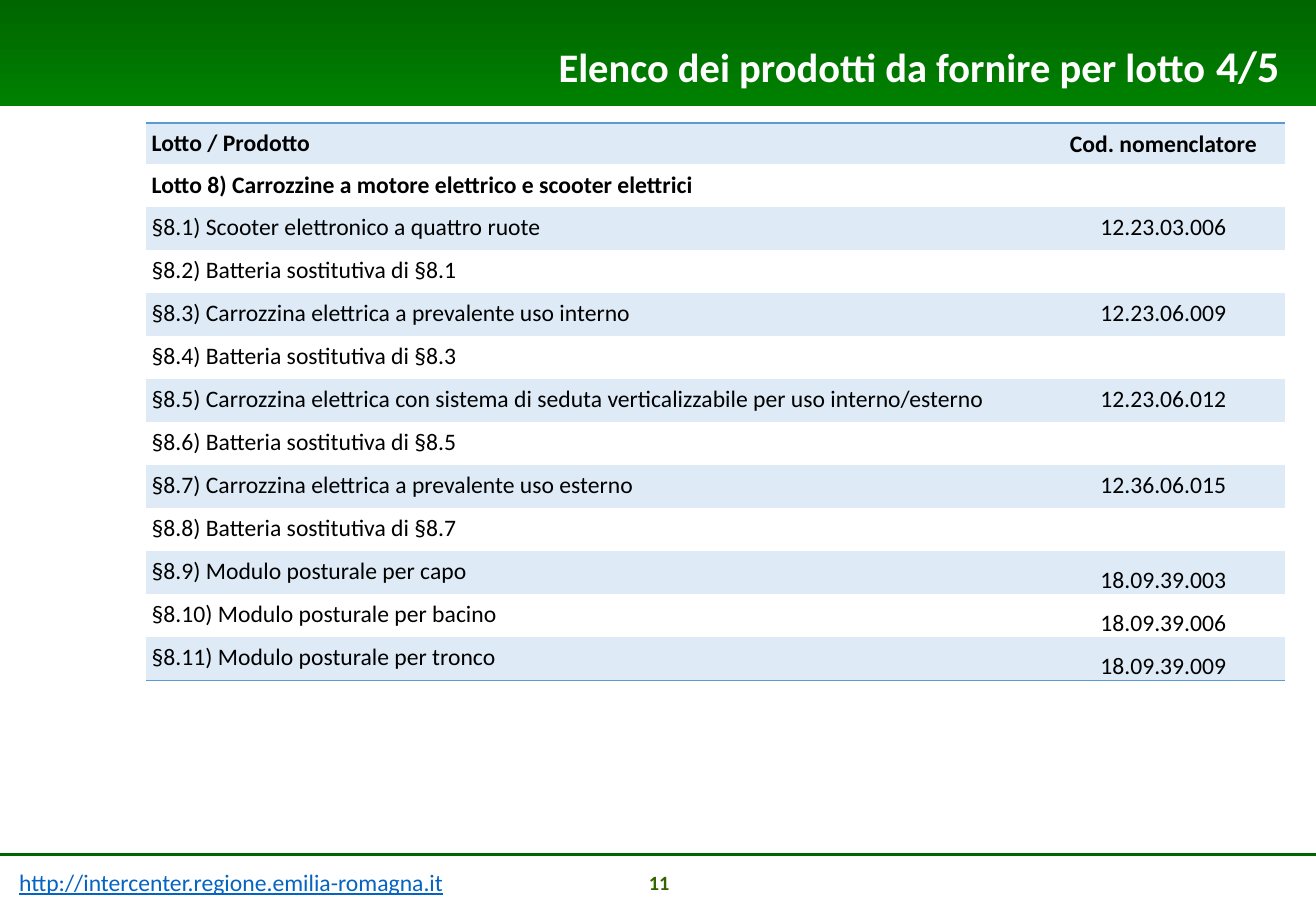
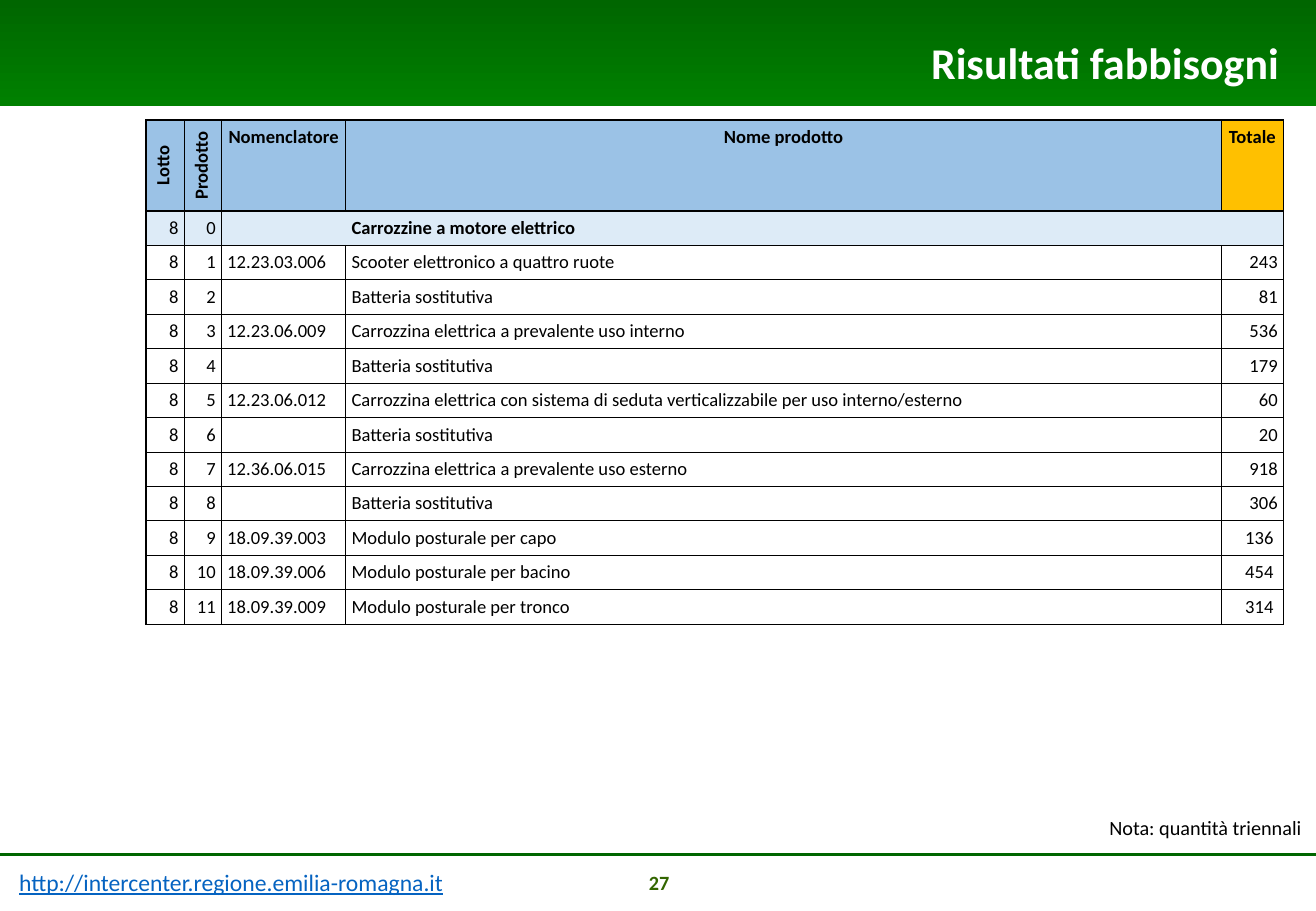
from lxml.etree import SubElement
from pptx import Presentation
from pptx.dml.color import RGBColor
from pptx.enum.shapes import MSO_CONNECTOR, MSO_SHAPE
from pptx.enum.text import MSO_ANCHOR, MSO_AUTO_SIZE, PP_ALIGN
from pptx.oxml.ns import qn
from pptx.util import Cm, Pt

HUE = {
    "dark": "006600", "green": "008000", "number": "336600", "link": "0563C1",
    "black": "000000", "white": "FFFFFF", "blue": "5B9BD5", "band": "DEEBF7",
    "head": "9BC2E6", "group": "DDEBF7", "gold": "FFC000",
}
FONT = "Calibri"
PLAIN = "{2D5ABB26-0587-4C30-8999-92F81FD0307C}"
LEFT, CENTER, RIGHT = PP_ALIGN.LEFT, PP_ALIGN.CENTER, PP_ALIGN.RIGHT


def write(frame, text, size=14, color="black", bold=False, under=False,
          align=LEFT, space=None):
    """Append one formatted run to the first paragraph of the frame."""
    para = frame.paragraphs[0]
    para.alignment = align
    if space:
        para.line_spacing = space
    if not text:
        para._p.get_or_add_endParaRPr().set("sz", str(size * 100))
        return
    run = para.add_run()
    run.text = text
    font = run.font
    font.name, font.size, font.bold = FONT, Pt(size), bold
    font.underline = under
    font.color.rgb = RGBColor.from_string(HUE[color])


def edge(cell, color, **sides):
    """Draw cell borders; sides L, R, T, B are given in that order, in points."""
    props = cell._tc.get_or_add_tcPr()
    for side, width in sides.items():
        line = SubElement(props, qn("a:ln" + side), w=str(Pt(width)))
        if width:
            fill = SubElement(line, qn("a:solidFill"))
            SubElement(fill, qn("a:srgbClr"), val=HUE[color])
        else:
            SubElement(line, qn("a:noFill"))


goods = [
    ("Scooter elettronico a quattro ruote", "12.23.03.006", "243"),
    ("Batteria sostitutiva", "", "81"),
    ("Carrozzina elettrica a prevalente uso interno", "12.23.06.009", "536"),
    ("Batteria sostitutiva", "", "179"),
    ("Carrozzina elettrica con sistema di seduta verticalizzabile per uso interno/esterno",
     "12.23.06.012", "60"),
    ("Batteria sostitutiva", "", "20"),
    ("Carrozzina elettrica a prevalente uso esterno", "12.36.06.015", "918"),
    ("Batteria sostitutiva", "", "306"),
    ("Modulo posturale per capo", "18.09.39.003", "136 "),
    ("Modulo posturale per bacino", "18.09.39.006", "454 "),
    ("Modulo posturale per tronco", "18.09.39.009", "314 "),
]
count = len(goods) + 2

# title runs, page number, table top, column widths, header height, row height
pages = [
    ([("Elenco dei prodotti da fornire per lotto", 24), (" ", 28), ("4/5", 26)],
     "11", 2.57, [18.72, 5.1], 0.86, 0.9),
    ([("Risultati fabbisogni", 26)],
     "27", 2.51, [0.8, 0.78, 2.6, 18.3, 1.3], 1.9, 0.72),
]

deck = Presentation()
deck.slide_width, deck.slide_height = Cm(27.51), Cm(19.05)
slides, tables = [], []

for parts, page, top, widths, first, rest in pages:
    slide = deck.slides.add_slide(deck.slide_layouts[5])
    shapes = slide.shapes
    slides.append(slide)

    band = shapes.add_shape(MSO_SHAPE.RECTANGLE, 0, 0, deck.slide_width, Cm(2.21))
    band.shadow.inherit = False
    band.line.fill.background()
    band.fill.gradient()
    band.fill.gradient_angle = 270
    for stop, color in zip(band.fill.gradient_stops, ("dark", "green")):
        stop.color.rgb = RGBColor.from_string(HUE[color])
    shapes._spTree.insert(2, band._element)

    title = shapes.title
    title.left, title.top = Cm(1.65), Cm(0.61)
    title.width, title.height = Cm(25.35), Cm(1.45)
    title.text_frame.auto_size = MSO_AUTO_SIZE.NONE
    title.text_frame.vertical_anchor = MSO_ANCHOR.TOP
    for text, size in parts:
        write(title.text_frame, text, size=size, color="white", bold=True, align=RIGHT)

    rule = shapes.add_connector(MSO_CONNECTOR.STRAIGHT, 0, Cm(17.86),
                                deck.slide_width, Cm(17.86))
    rule.line.color.rgb = RGBColor.from_string(HUE["dark"])
    rule.line.width = Pt(1.75)
    SubElement(rule._element.spPr, qn("a:effectLst"))

    site = shapes.add_textbox(Cm(0.15), Cm(18.02), Cm(12.22), Cm(0.86)).text_frame
    site.word_wrap = True
    write(site, "http://intercenter.regione.emilia-romagna.it", color="link", under=True)
    foot = shapes.add_textbox(Cm(10.92), Cm(18.08), Cm(5.72), Cm(0.69)).text_frame
    foot.word_wrap = True
    write(foot, page, size=12, color="number", bold=True, align=CENTER)

    high = first + rest * (count - 1)
    frame = shapes.add_table(count, len(widths), Cm(3.05), Cm(top),
                             Cm(sum(widths)), Cm(high))
    table = frame.table
    table.first_row = table.horz_banding = False
    table._tbl.tblPr.find(qn("a:tableStyleId")).text = PLAIN
    for col, width in zip(table.columns, widths):
        col.width = Cm(width)
    for row in table.rows:
        row.height = Cm(rest)
    table.rows[0].height = Cm(first)
    for cell in table.iter_cells():
        cell.margin_left = cell.margin_right = Cm(0.12)
        cell.margin_top = cell.margin_bottom = Cm(0.12)
    tables.append(table)

# Product list
table = tables[0]
rows = [("Lotto / Prodotto", "Cod. nomenclatore"),
        ("Lotto 8) Carrozzine a motore elettrico e scooter elettrici", "")]
for n, (name, code, total) in enumerate(goods, 1):
    tail = "" if code else f" di §8.{n - 1}"
    rows.append((f"§8.{n}) {name}{tail}", code))

for r, row in enumerate(rows):
    for c, text in enumerate(row):
        cell = table.cell(r, c)
        low = c == 1 and text.startswith("18.")
        if low:
            cell.margin_top = cell.margin_bottom = 0
        write(cell.text_frame, text, bold=r < 2, align=CENTER if c else LEFT,
              space=1.5 if low else None)
        if r == 0:
            edge(cell, "blue", T=1)
        elif r == count - 1:
            edge(cell, "blue", B=1)
        if r % 2:
            cell.fill.background()
        else:
            cell.fill.solid()
            cell.fill.fore_color.rgb = RGBColor.from_string(HUE["band"])
table.cell(0, 1).vertical_anchor = MSO_ANCHOR.BOTTOM
table.cell(1, 0).vertical_anchor = MSO_ANCHOR.MIDDLE

# Quantities
table = tables[1]
rows = [("Lotto", "Prodotto", "Nomenclatore", "Nome prodotto", "Totale"),
        ("8", "0", "", "Carrozzine a motore elettrico", "")]
for n, (name, code, total) in enumerate(goods, 1):
    rows.append(("8", str(n), code, name, total))
sides = [RIGHT, RIGHT, LEFT, LEFT, RIGHT]

for r, row in enumerate(rows):
    for c, text in enumerate(row):
        cell = table.cell(r, c)
        write(cell.text_frame, text, size=11, bold=r == 0 or (r, c) == (1, 3),
              align=sides[c] if r else CENTER)
        edge(cell, "black",
             L=1 if c == 0 else 0 if r == 1 and c > 2 else 0.5,
             R=1 if c == 4 else 0 if r == 1 and c > 1 else 0.5,
             T=1 if r < 2 else 0.5,
             B=1 if r == 0 else 0.5)
        if r > 1:
            cell.fill.background()
            continue
        color = "group" if r else "gold" if c == 4 else "head"
        cell.fill.solid()
        cell.fill.fore_color.rgb = RGBColor.from_string(HUE[color])
for c in range(2):
    table.cell(0, c)._tc.get_or_add_tcPr().set("vert", "vert270")

note = slides[1].shapes.add_textbox(Cm(22.94), Cm(16.92), Cm(4.57), Cm(0.76)).text_frame
note.word_wrap = False
write(note, "Nota: quantità triennali", size=12)

deck.save("out.pptx")
